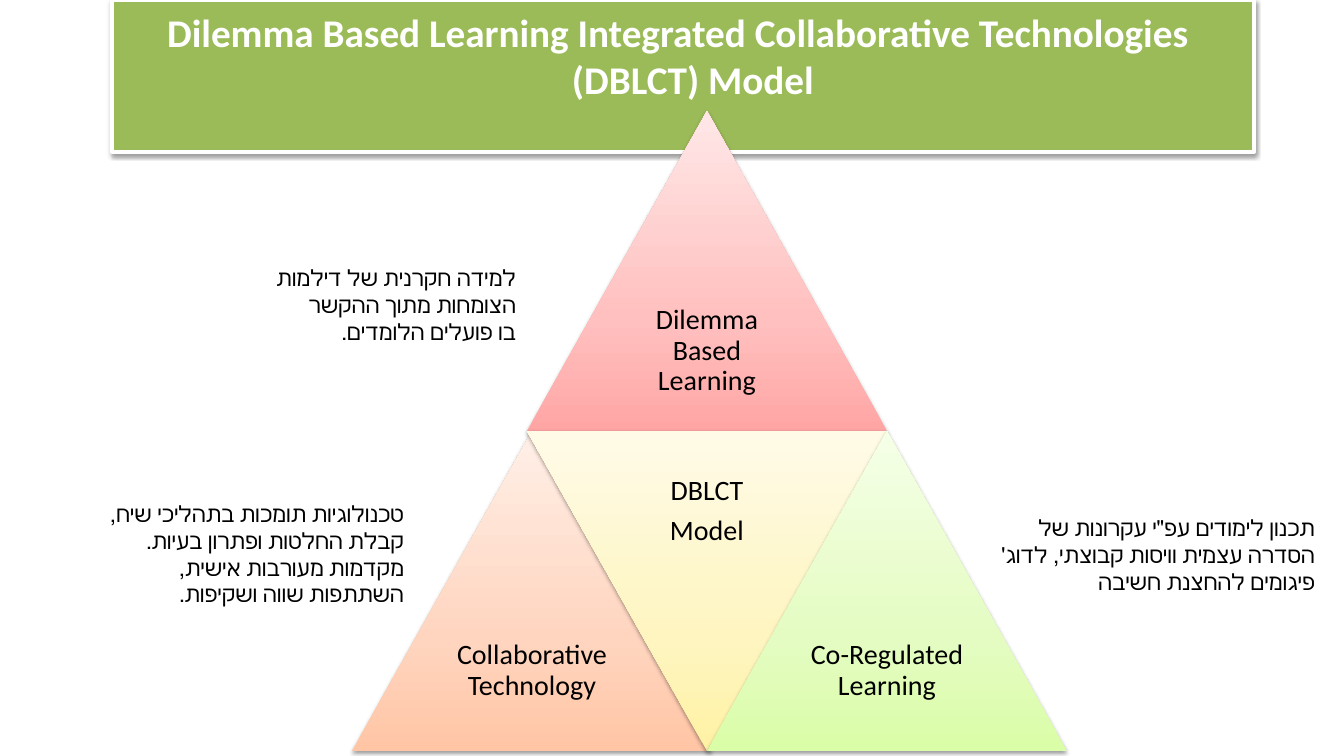
from dataclasses import dataclass

from lxml.etree import SubElement
from pptx import Presentation
from pptx.dml.color import RGBColor
from pptx.enum.shapes import MSO_SHAPE
from pptx.enum.text import MSO_ANCHOR, PP_ALIGN
from pptx.oxml.ns import qn
from pptx.shapes.autoshape import Shape
from pptx.slide import Slide
from pptx.text.text import TextFrame
from pptx.util import Emu, Pt

PX_PER_INCH = 100.8
FONT = "Calibri"
BLACK = RGBColor(0x00, 0x00, 0x00)
WHITE = RGBColor(0xFF, 0xFF, 0xFF)
GREEN = RGBColor(0x9B, 0xBB, 0x59)
RED_SHADES = (RGBColor(0xFF, 0xA6, 0xA5), RGBColor(0xFF, 0xC0, 0xBF), RGBColor(0xFF, 0xE7, 0xE7))
ORANGE_SHADES = (RGBColor(0xFF, 0xC5, 0xA5), RGBColor(0xFF, 0xD5, 0xBF), RGBColor(0xFF, 0xEF, 0xE7))
YELLOW_SHADES = (RGBColor(0xFF, 0xF2, 0xA5), RGBColor(0xFE, 0xF5, 0xC0), RGBColor(0xFF, 0xFB, 0xE7))
LIME_SHADES = (RGBColor(0xDA, 0xFD, 0xA7), RGBColor(0xE4, 0xFC, 0xC2), RGBColor(0xF5, 0xFF, 0xE7))
SHADE_POSITIONS = (0, 35, 100)
TRIANGLE_WIDTH, TRIANGLE_HEIGHT = 360, 320


@dataclass(frozen=True)
class Triangle:
    left: int
    top: int
    shades: tuple[RGBColor, ...]
    lines: tuple[str, ...]
    inverted: bool = False


@dataclass(frozen=True)
class Note:
    left: int
    top: int
    width: int
    height: int
    lines: tuple[str, ...]


TRIANGLES = (
    Triangle(527, 111, RED_SHADES, ("Dilemma Based Learning",)),
    Triangle(352, 431, ORANGE_SHADES, ("Collaborative Technology",)),
    Triangle(527, 431, YELLOW_SHADES, ("DBLCT", "Model"), inverted=True),
    Triangle(707, 431, LIME_SHADES, ("Co-Regulated Learning",)),
)
NOTES = (
    Note(69, 495, 345, 119, (
        "טכנולוגיות תומכות בתהליכי שיח, קבלת החלטות ופתרון בעיות. "
        "מקדמות מעורבות אישית, השתתפות שווה ושקיפות.",
    )),
    Note(181, 259, 345, 92, (
        "למידה חקרנית של דילמות\vהצומחות מתוך ההקשר",
        "בו פועלים הלומדים.",
    )),
    Note(980, 509, 345, 92, (
        "תכנון לימודים עפ\"י עקרונות של הסדרה עצמית וויסות קבוצתי, "
        "לדוג' פיגומים להחצנת חשיבה",
    )),
)


def px(length: int) -> Emu:
    return Emu(round(length * 914400 / PX_PER_INCH))


def add_shadow(shape: Shape) -> None:
    shape.shadow.inherit = False
    effects = shape._element.spPr.find(qn("a:effectLst"))
    shadow = SubElement(effects, qn("a:outerShdw"), blurRad="40000", dist="20000",
                        dir="5400000", rotWithShape="0")
    color = SubElement(shadow, qn("a:srgbClr"), val="000000")
    SubElement(color, qn("a:alpha"), val="38000")


def fill_gradient(shape: Shape, shades: tuple[RGBColor, ...]) -> None:
    shape.fill.gradient()
    gradient = shape._element.spPr.find(qn("a:gradFill"))
    gradient.set("rotWithShape", "0")
    gradient.find(qn("a:lin")).set("ang", "16200000")
    stops = gradient.find(qn("a:gsLst"))
    stops.clear()
    for position, shade in zip(SHADE_POSITIONS, shades):
        stop = SubElement(stops, qn("a:gs"), pos=str(position * 1000))
        SubElement(stop, qn("a:srgbClr"), val=str(shade))


def write_lines(frame: TextFrame, lines: tuple[str, ...], size: int, alignment: PP_ALIGN,
                color: RGBColor = BLACK, bold: bool = False) -> None:
    frame.word_wrap = True
    for index, line in enumerate(lines):
        paragraph = frame.paragraphs[0] if index == 0 else frame.add_paragraph()
        paragraph.text = line
        paragraph.alignment = alignment
        paragraph._p.get_or_add_pPr().set("rtl", "1")
        paragraph.font.name = FONT
        paragraph.font.size = Pt(size)
        paragraph.font.bold = bold
        paragraph.font.color.rgb = color


def add_title(slide: Slide) -> None:
    banner = slide.shapes.add_shape(MSO_SHAPE.RECTANGLE, px(112), px(0), px(1142), px(152))
    banner.fill.solid()
    banner.fill.fore_color.rgb = GREEN
    banner.line.color.rgb = WHITE
    banner.line.width = Pt(3)
    add_shadow(banner)
    frame = banner.text_frame
    frame.vertical_anchor = MSO_ANCHOR.TOP
    frame.margin_top = px(8)
    title = " Dilemma Based Learning Integrated Collaborative Technologies\v (DBLCT) Model "
    write_lines(frame, (title,), 28, PP_ALIGN.CENTER, WHITE, bold=True)


def add_triangle(slide: Slide, triangle: Triangle) -> None:
    shape = slide.shapes.add_shape(MSO_SHAPE.ISOSCELES_TRIANGLE, px(triangle.left), px(triangle.top),
                                   px(TRIANGLE_WIDTH), px(TRIANGLE_HEIGHT))
    shape.rotation = 180 if triangle.inverted else 0
    fill_gradient(shape, triangle.shades)
    shape.line.fill.background()
    add_shadow(shape)

    label_top = triangle.top if triangle.inverted else triangle.top + TRIANGLE_HEIGHT // 2
    label = slide.shapes.add_textbox(px(triangle.left + TRIANGLE_WIDTH // 4), px(label_top),
                                     px(TRIANGLE_WIDTH // 2), px(TRIANGLE_HEIGHT // 2))
    frame = label.text_frame
    frame.vertical_anchor = MSO_ANCHOR.MIDDLE
    frame.margin_left = frame.margin_right = frame.margin_top = frame.margin_bottom = px(8)
    write_lines(frame, triangle.lines, 20, PP_ALIGN.CENTER)
    for paragraph in frame.paragraphs:
        paragraph.line_spacing = 0.9
        paragraph.space_after = Pt(7)


def add_note(slide: Slide, note: Note) -> None:
    box = slide.shapes.add_textbox(px(note.left), px(note.top), px(note.width), px(note.height))
    write_lines(box.text_frame, note.lines, 16, PP_ALIGN.RIGHT)


def main() -> None:
    presentation = Presentation()
    presentation.slide_width, presentation.slide_height = px(1344), px(756)
    slide = presentation.slides.add_slide(presentation.slide_layouts[6])
    add_title(slide)
    for triangle in TRIANGLES:
        add_triangle(slide, triangle)
    for note in NOTES:
        add_note(slide, note)
    presentation.save("out.pptx")


if __name__ == "__main__":
    main()
